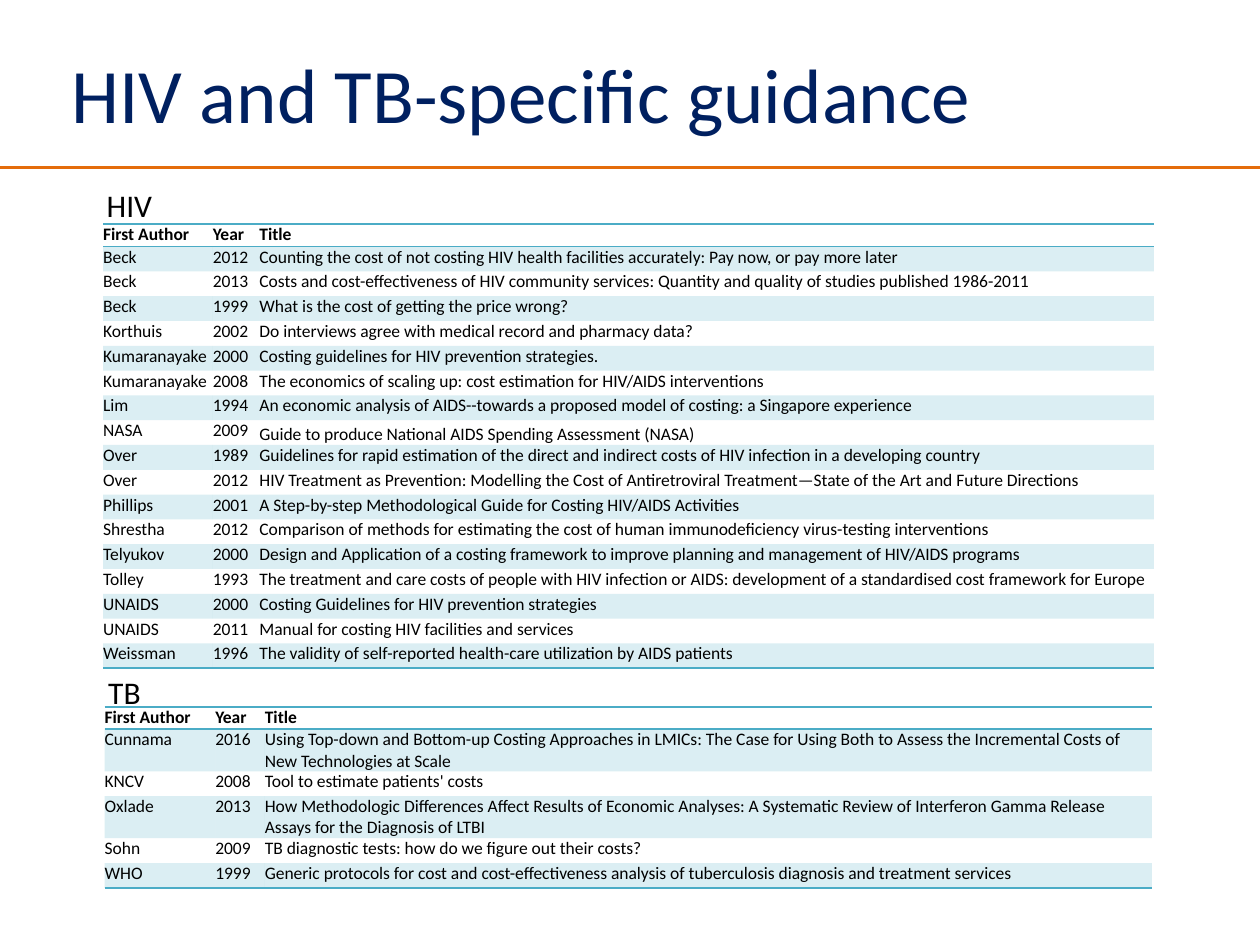
from lxml import etree
from pptx import Presentation
from pptx import util as u
from pptx.dml.color import RGBColor
from pptx.enum import shapes, text
from pptx.oxml import ns

TEAL = "4BACC6"
TABLE_STYLE = "{2D5ABB26-0587-4C30-8999-92F81FD0307C}"


def rgb(value):
    return RGBColor.from_string(value)


def add_run(p, content, size, color="000000", bold=False):
    r = p.add_run()
    r.text = content
    r.font.name = "Calibri"
    r.font.size = u.Pt(size)
    r.font.bold = bold
    r.font.color.rgb = rgb(color)


header = ("First Author", "Year", "Title")
hiv_rows = [
    header,
    ("Beck", "2012", "Counting the cost of not costing HIV health facilities accurately: Pay now, or pay more later"),
    ("Beck", "2013", "Costs and cost-effectiveness of HIV community services: Quantity and quality of studies published 1986-2011"),
    ("Beck", "1999", "What is the cost of getting the price wrong?"),
    ("Korthuis", "2002", "Do interviews agree with medical record and pharmacy data?"),
    ("Kumaranayake", "2000", "Costing guidelines for HIV prevention strategies."),
    ("Kumaranayake", "2008", "The economics of scaling up: cost estimation for HIV/AIDS interventions"),
    ("Lim", "1994", "An economic analysis of AIDS--towards a proposed model of costing: a Singapore experience"),
    ("NASA", "2009", "Guide to produce National AIDS Spending Assessment (NASA)"),
    ("Over", "1989", "Guidelines for rapid estimation of the direct and indirect costs of HIV infection in a developing country"),
    ("Over", "2012", "HIV Treatment as Prevention: Modelling the Cost of Antiretroviral Treatment—State of the Art and Future Directions"),
    ("Phillips", "2001", "A Step-by-step Methodological Guide for Costing HIV/AIDS Activities"),
    ("Shrestha", "2012", "Comparison of methods for estimating the cost of human immunodeficiency virus-testing interventions"),
    ("Telyukov", "2000", "Design and Application of a costing framework to improve planning and management of HIV/AIDS programs"),
    ("Tolley", "1993", "The treatment and care costs of people with HIV infection or AIDS: development of a standardised cost framework for Europe"),
    ("UNAIDS", "2000", "Costing Guidelines for HIV prevention strategies"),
    ("UNAIDS", "2011", "Manual for costing HIV facilities and services"),
    ("Weissman", "1996", "The validity of self-reported health-care utilization by AIDS patients"),
]
tb_rows = [
    header,
    ("Cunnama", "2016", "Using Top-down and Bottom-up Costing Approaches in LMICs: The Case for Using Both to Assess the Incremental Costs of New Technologies at Scale"),
    ("KNCV", "2008", "Tool to estimate patients' costs"),
    ("Oxlade", "2013", "How Methodologic Differences Affect Results of Economic Analyses: A Systematic Review of Interferon Gamma Release Assays for the Diagnosis of LTBI"),
    ("Sohn", "2009", "TB diagnostic tests: how do we figure out their costs?"),
    ("WHO", "1999", "Generic protocols for cost and cost-effectiveness analysis of tuberculosis diagnosis and treatment services"),
]

prs = Presentation()
prs.slide_width, prs.slide_height = u.Cm(25.4), u.Cm(19.05)
s = prs.slides.add_slide(prs.slide_layouts[6])

rule = s.shapes.add_connector(shapes.MSO_CONNECTOR.STRAIGHT, 0, u.Cm(3.38), prs.slide_width, u.Cm(3.38))
rule.line.color.rgb = rgb("E46C0A")
rule.line.width = u.Pt(1.5)
etree.SubElement(rule._element.spPr, ns.qn("a:effectLst"))

title = s.shapes.add_textbox(u.Cm(1.19), u.Cm(0.74), u.Cm(22.94), u.Cm(2.64))
tf = title.text_frame
tf.word_wrap = True
tf.margin_top = u.Cm(0.2)
add_run(tf.paragraphs[0], "HIV and TB-specific guidance", 44, "002060")

tables = [
    (hiv_rows, 2.08, 4.52, (2.21, 0.94, 18.03)),
    (tb_rows, 2.11, 14.25, (2.23, 1.0, 17.88)),
]
for rows, left, top, widths in tables:
    heights = [0.45] + [0.5] * (len(rows) - 1)
    frame = s.shapes.add_table(len(rows), len(widths), u.Cm(left), u.Cm(top), u.Cm(sum(widths)), u.Cm(sum(heights)))
    table = frame.table
    table.first_row = table.horz_banding = False
    table._tbl.tblPr.find(ns.qn("a:tableStyleId")).text = TABLE_STYLE
    for col, width in zip(table.columns, widths):
        col.width = u.Cm(width)
    for i, values in enumerate(rows):
        table.rows[i].height = u.Cm(heights[i])
        edges = {0: ("lnT", "lnB"), len(rows) - 1: ("lnB",)}.get(i, ())
        for j, value in enumerate(values):
            cell = table.cell(i, j)
            cell.margin_left = cell.margin_right = cell.margin_top = cell.margin_bottom = 0
            if value.startswith("Guide to"):
                cell.vertical_anchor = text.MSO_ANCHOR.BOTTOM
            add_run(cell.text_frame.paragraphs[0], value, 10, bold=i == 0)
            tcPr = cell._tc.get_or_add_tcPr()
            for edge in edges:
                ln = etree.SubElement(tcPr, ns.qn("a:" + edge), w=str(u.Pt(1)))
                line_fill = etree.SubElement(ln, ns.qn("a:solidFill"))
                etree.SubElement(line_fill, ns.qn("a:srgbClr"), val=TEAL)
            if i % 2:
                cell.fill.solid()
                cell.fill.fore_color.rgb = rgb(TEAL)
                color = tcPr.find(ns.qn("a:solidFill")).find(ns.qn("a:srgbClr"))
                etree.SubElement(color, ns.qn("a:alpha"), val="20000")
            else:
                cell.fill.background()

for label, top, width in [("HIV", 3.74, 1.42), ("TB", 13.56, 1.22)]:
    sp = s.shapes.add_textbox(u.Cm(1.9), u.Cm(top), u.Cm(width), u.Cm(0.79))
    tf = sp.text_frame
    tf.word_wrap = True
    tf.margin_left = tf.margin_right = tf.margin_top = tf.margin_bottom = 0
    tf.vertical_anchor = text.MSO_ANCHOR.MIDDLE
    p = tf.paragraphs[0]
    p.alignment = text.PP_ALIGN.CENTER
    add_run(p, label, 18)

prs.save("out.pptx")
